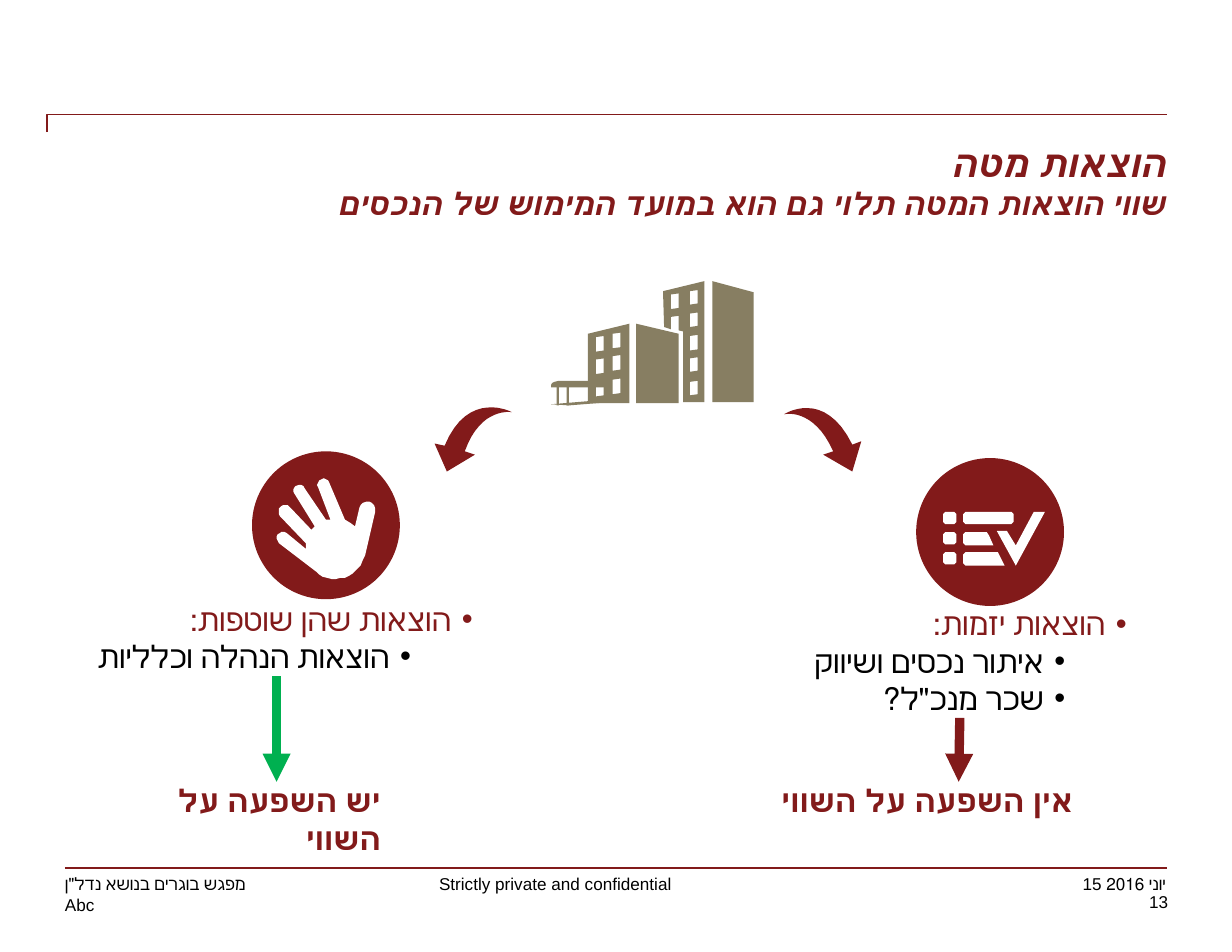
from lxml.etree import SubElement
from pptx import Presentation
from pptx.dml.color import RGBColor
from pptx.enum.shapes import MSO_CONNECTOR, MSO_SHAPE
from pptx.enum.text import MSO_ANCHOR, MSO_AUTO_SIZE, PP_ALIGN
from pptx.oxml.ns import qn
from pptx.util import Cm, Pt

RED = RGBColor(0x82, 0x1A, 0x1A)
GREEN = RGBColor(0x00, 0xB0, 0x50)
KHAKI = RGBColor(0x87, 0x7E, 0x62)
WHITE = RGBColor(0xFF, 0xFF, 0xFF)
BLACK = RGBColor(0, 0, 0)
SERIF, SANS = "TeX Gyre Schola", "Arial"
UNIT = 2.54  # cm per layout unit
FINE = 1000  # freeform steps per layout unit
LEFT, RIGHT = PP_ALIGN.LEFT, PP_ALIGN.RIGHT

# Content: text and (left, top, width, height)
TITLE = [("הוצאות מטה", 24), ("שווי הוצאות המטה תלוי גם הוא במועד המימוש של הנכסים", 20)]
FOOTERS = [
    ("Abc", (0.58, 8.03, 0.3, 0.12), LEFT, 10),
    ("15 יוני 2016", (9.64, 7.8, 0.77, 0.19), RIGHT, None),
    ("Strictly private and confidential", (3.92, 7.8, 2.09, 0.19), LEFT, None),
    ("13", (10.08, 8, 0.35, 0.17), RIGHT, 10),
    ("מפגש בוגרים בנושא נדל\"ן", (0.58, 7.8, 3.17, 0.19), LEFT, None),
]
BULLETS = [
    ((7.09, 5.4, 2.97, 1.01), ["הוצאות יזמות:", "איתור נכסים ושיווק", "שכר מנכ\"ל?"]),
    ((0.72, 5.36, 3.5, 0.67), ["הוצאות שהן שוטפות:", "הוצאות הנהלה וכלליות"]),
]
CONCLUSIONS = [
    ("אין השפעה על השווי", (6.97, 6.98, 3.18, 0.34), PP_ALIGN.CENTER),
    ("יש השפעה על השווי", (0.98, 6.98, 2.98, 0.34), RIGHT),
]
ARROWS = [((2.47, 6.04), (2.47, 6.98), GREEN), ((8.57, 6.41), (8.56, 6.98), RED)]

# Building: outlines, and windows as (left, top, height)
WALLS = [
    ([(6.73, 2.61), (6.36, 2.51), (6.36, 3.59), (6.73, 3.59)], []),
    ([(5.92, 2.6), (5.93, 2.92), (5.99, 2.94), (5.99, 2.83), (6.06, 2.82), (6.06, 2.95),
      (6.1, 2.96), (6.1, 3.59), (6.29, 3.59), (6.29, 2.51)],
     [(5.99, 2.63, 0.13), (6.16, 2.6, 0.12), (6.16, 2.8, 0.12), (6.16, 3, 0.13),
      (6.16, 3.2, 0.12), (6.16, 3.41, 0.12)]),
    ([(5.68, 2.89), (5.68, 3.6), (6.06, 3.6), (6.06, 2.98)], []),
    ([(5.25, 2.98), (5.25, 3.6), (5.62, 3.6), (5.62, 2.89)],
     [(x, y, 0.13) for x, tops in ((5.32, (3.01, 3.21, 3.41)), (5.47, (2.98, 3.18, 3.39)))
      for y in tops]),
    ([(5.46, 3.46), (5.45, 3.42), (5.42, 3.41), (5.38, 3.4), (4.99, 3.4), (4.95, 3.41),
      (4.93, 3.42), (4.92, 3.44), (4.92, 3.46)], []),
    ([(5.08, 3.62), (5.46, 3.59), (5.28, 3.58), (4.92, 3.61)], []),
]
POSTS = [(5.06, 3.45, 0.02, 0.17), (4.97, 3.45, 0.02, 0.17)]

# Icons
HAND = [
    (3.35, 4.57), (3.26, 4.96), (3.24, 5), (3.22, 5.05), (3.19, 5.08), (3.15, 5.12),
    (3.12, 5.14), (3.08, 5.16), (3.04, 5.16), (3, 5.17), (2.96, 5.17), (2.92, 5.16),
    (2.88, 5.15), (2.85, 5.13), (2.83, 5.11), (2.49, 4.85), (2.48, 4.83), (2.47, 4.81),
    (2.47, 4.79), (2.48, 4.77), (2.5, 4.76), (2.51, 4.75), (2.54, 4.75), (2.56, 4.76),
    (2.73, 4.9), (2.73, 4.85), (2.5, 4.61), (2.49, 4.59), (2.49, 4.54), (2.51, 4.52),
    (2.53, 4.51), (2.57, 4.51), (2.59, 4.53), (2.78, 4.73), (2.81, 4.7), (2.63, 4.41),
    (2.62, 4.39), (2.62, 4.37), (2.63, 4.35), (2.64, 4.34), (2.67, 4.33), (2.69, 4.33),
    (2.71, 4.34), (2.72, 4.36), (2.91, 4.64), (2.95, 4.64), (2.84, 4.35), (2.83, 4.33),
    (2.84, 4.31), (2.85, 4.29), (2.87, 4.28), (2.89, 4.27), (2.91, 4.28), (2.93, 4.29),
    (2.94, 4.31), (3.08, 4.64), (3.13, 4.67), (3.17, 4.7), (3.21, 4.53), (3.22, 4.51),
    (3.24, 4.49), (3.27, 4.48), (3.3, 4.48), (3.32, 4.49), (3.34, 4.51), (3.35, 4.54),
]
ROW_TOPS = (4.57, 4.75, 4.93)
BARS = [
    [(8.62, 4.87), (8.87, 4.87), (8.83, 4.78), (8.81, 4.75), (8.62, 4.75), (8.6, 4.77),
     (8.6, 4.85)],
    [(8.91, 4.93), (8.62, 4.93), (8.6, 4.95), (8.6, 5.03), (8.62, 5.05), (8.97, 5.05)],
    [(9.33, 4.57), (9.23, 4.57), (9.07, 4.87), (8.99, 4.74), (8.9, 4.74), (9.07, 5.05)],
]

# Curved arrows: arrowhead points, then two Bezier curves
SWOOPS = [
    ([(7.69, 3.94), (7.61, 4.21), (7.35, 4.06), (7.44, 4.03)],
     [(7.26, 3.63), (7, 3.7), (7, 3.7)], [(7, 3.7), (7.36, 3.46), (7.61, 3.97)]),
    ([(3.88, 3.96), (3.99, 4.21), (4.24, 4.06), (4.15, 4.03)],
     [(4.29, 3.63), (4.57, 3.68), (4.57, 3.68)], [(4.57, 3.68), (4.18, 3.47), (3.97, 3.98)]),
]


def cm(values):
    return [Cm(v * UNIT) for v in values]


def bezier(p0, p1, p2, p3, steps=16):
    ts = [i / steps for i in range(1, steps + 1)]
    return [tuple((1 - t) ** 3 * a + 3 * t * (1 - t) ** 2 * b + 3 * t * t * (1 - t) * c + t ** 3 * d
                  for a, b, c, d in zip(p0, p1, p2, p3)) for t in ts]


def window(x, y, h, w=0.07, rise=0.01):
    return [(x, y), (x + w, y - rise), (x + w, y + h - rise), (x, y + h)]


def rounded(x, y, w, h=0.11, c=0.02):
    r, b = x + w, y + h
    return [(x + c, y), (r - c, y), (r, y + c), (r, b - c),
            (r - c, b), (x + c, b), (x, b - c), (x, y + c)]


def paint(sp, fill):
    sp.shadow.inherit = False
    sp.fill.solid()
    sp.fill.fore_color.rgb = fill
    sp.line.fill.background()


def add_outline(shapes, contours, fill):
    contours = [[(x * FINE, y * FINE) for x, y in points] for points in contours]
    fb = shapes.build_freeform(*contours[0][0], scale=Cm(UNIT) / FINE)
    for i, points in enumerate(contours):
        if i:
            fb.move_to(*points[0])
        fb.add_line_segments(points[1:], close=True)
    paint(fb.convert_to_shape(), fill)


def add_preset(shapes, kind, box, fill):
    paint(shapes.add_shape(kind, *cm(box)), fill)


def add_line(shapes, kind, start, end, color, width):
    ln = shapes.add_connector(kind, *cm(start + end))
    ln.line.color.rgb = color
    ln.line.width = Pt(width)
    SubElement(ln._element.spPr, qn("a:effectLst"))
    return ln


def frame(sp, wrap=True):
    tf = sp.text_frame
    tf.margin_left = tf.margin_right = tf.margin_top = tf.margin_bottom = 0
    tf.word_wrap = wrap
    tf.vertical_anchor = MSO_ANCHOR.TOP
    return tf


def write(p, text, size=20, font=SERIF, color=RED, bold=False, italic=False, align=RIGHT,
          rtl=True, level=0, indent=0, hanging=0, bullet=None, spacing=None):
    p.alignment, p.level = align, level
    if spacing:
        p.line_spacing = Pt(spacing)
    pPr = p._p.get_or_add_pPr()
    pPr.set("rtl", str(int(rtl)))
    pPr.set("marL", str(Cm(indent * UNIT)))
    pPr.set("indent", str(Cm(-hanging * UNIT)))
    if bullet:
        SubElement(pPr, qn("a:buFont"), typeface=SANS)
        SubElement(pPr, qn("a:buChar"), char=bullet)
    r = p.add_run()
    r.text = text
    f = r.font
    f.size, f.name, f.bold, f.italic = Pt(size), font, bold, italic
    f.color.rgb = color


def main():
    prs = Presentation()
    prs.slide_width, prs.slide_height = cm((11, 8.5))
    s = prs.slides.add_slide(prs.slide_layouts[5])
    shapes = s.shapes

    # Rules and footer
    add_line(shapes, MSO_CONNECTOR.STRAIGHT, (0.58, 7.75), (10.42, 7.75), RED, 0.75)
    elbow = add_line(shapes, MSO_CONNECTOR.ELBOW, (0.42, 1.18), (10.42, 1.02), RED, 0.75)
    guides = elbow._element.spPr.find(qn("a:prstGeom")).get_or_add_avLst()
    SubElement(guides, qn("a:gd"), name="adj1", fmla="val 0")
    for text, box, align, spacing in FOOTERS:
        tf = frame(shapes.add_textbox(*cm(box)), wrap=False)
        if not spacing:
            tf.auto_size = MSO_AUTO_SIZE.SHAPE_TO_FIT_TEXT
        write(tf.paragraphs[0], text, size=11, font=SANS, color=BLACK, align=align,
              rtl=False, spacing=spacing)

    # Title
    title = shapes.title
    title.left, title.top, title.width, title.height = cm((0.58, 1.25, 9.84, 0.74))
    p = frame(title).paragraphs[0]
    for i, (text, size) in enumerate(TITLE):
        if i:
            p.add_line_break()
        write(p, text, size=size, bold=True, italic=True)

    # Building
    building = shapes.add_group_shape().shapes
    for wall, windows in WALLS:
        add_outline(building, [wall] + [window(*w) for w in windows], KHAKI)
    for post in POSTS:
        add_preset(building, MSO_SHAPE.RECTANGLE, post, KHAKI)

    # Round icons
    checklist = [rounded(8.42, y, 0.12) for y in ROW_TOPS] + [rounded(8.6, ROW_TOPS[0], 0.45)] + BARS
    for corner, contours in (((8.18, 4.09), checklist), ((2.25, 4.03), [HAND])):
        icon = shapes.add_group_shape().shapes
        add_preset(icon, MSO_SHAPE.OVAL, corner + (1.32, 1.32), RED)
        add_outline(icon, contours, WHITE)

    # Bullet lists
    for box, lines in BULLETS:
        tf = frame(shapes.add_textbox(*cm(box)))
        for i, text in enumerate(lines):
            p = tf.add_paragraph() if i else tf.paragraphs[0]
            write(p, text, color=BLACK if i else RED, level=1 if i else 0,
                  indent=0.74 if i else 0.19, hanging=0.19, bullet="•")

    # Curved arrows
    for head, inner, outer in SWOOPS:
        add_outline(shapes, [head + bezier(head[-1], *inner) + bezier(inner[-1], *outer)], RED)

    # Conclusions and straight arrows
    for text, box, align in CONCLUSIONS:
        tf = frame(shapes.add_textbox(*cm(box)))
        write(tf.paragraphs[0], text, bold=True, align=align, level=1, indent=0.56)
    for start, end, color in ARROWS:
        arrow = add_line(shapes, MSO_CONNECTOR.STRAIGHT, start, end, color, 6)
        SubElement(arrow.line._get_or_add_ln(), qn("a:tailEnd"), type="triangle")

    prs.save("out.pptx")


if __name__ == "__main__":
    main()
